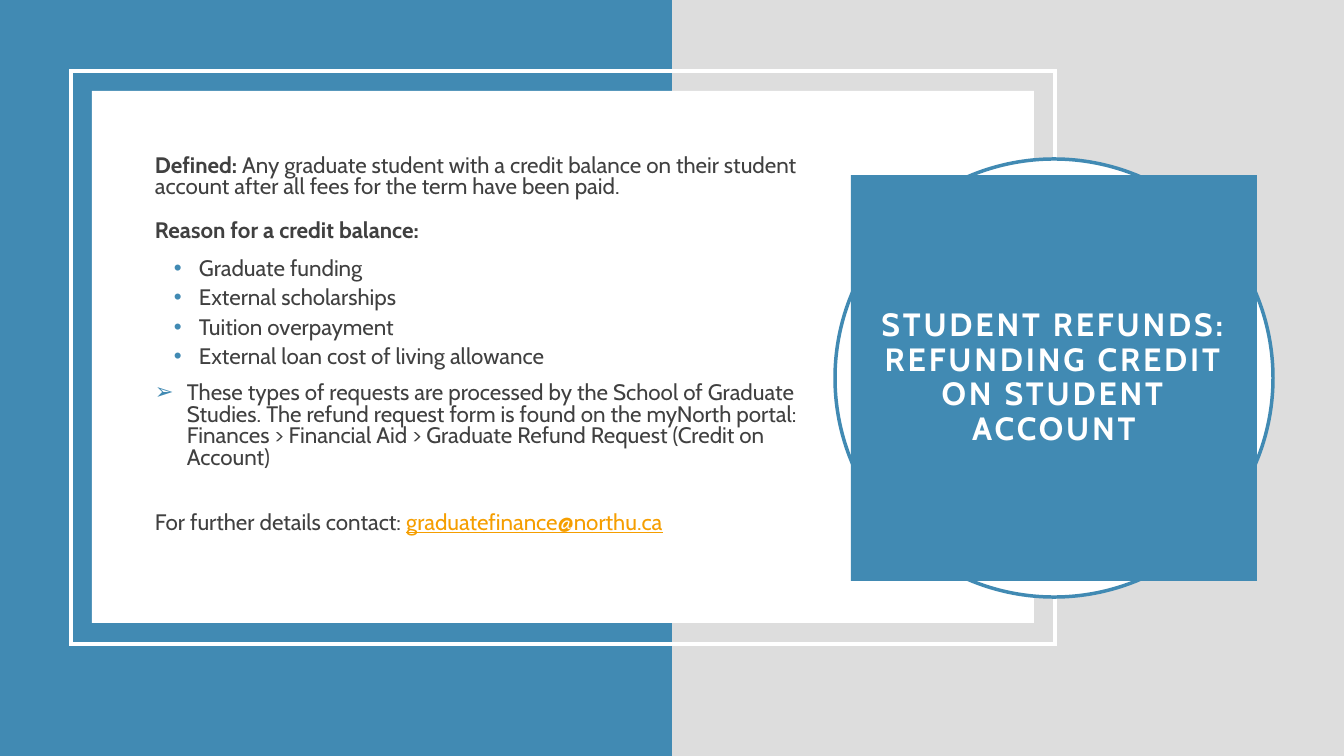
"""Build the slide on refunding a credit balance on a student account."""
from dataclasses import dataclass
from typing import Optional

from lxml.etree import SubElement
from pptx import Presentation
from pptx.dml.color import RGBColor
from pptx.enum.shapes import MSO_SHAPE
from pptx.enum.text import MSO_ANCHOR, MSO_AUTO_SIZE, PP_ALIGN
from pptx.oxml.ns import qn
from pptx.util import Emu, Pt

PX = 914400 / 100.8
FONT = "Cabin"
BLUE, GREY, WHITE, DARK, ORANGE = "418AB3", "DDDDDD", "FFFFFF", "404040", "F59E00"


@dataclass(frozen=True)
class Panel:
    kind: MSO_SHAPE
    left: int
    top: int
    width: int
    height: int
    fill: Optional[str] = None
    line: Optional[str] = None


@dataclass(frozen=True)
class Piece:
    text: str
    bold: bool = False
    color: str = DARK
    underline: bool = False


@dataclass(frozen=True)
class Passage:
    pieces: tuple[Piece, ...]
    spacing: float = 0.8
    before: int = 10
    after: int = 6
    bullet: str = ""
    margin: int = 0
    hanging: int = 0


def reason(text: str) -> Passage:
    """Return one bulleted reason for a credit balance."""
    return Passage((Piece(text),), 1.1, 0, 0, "•", 44, 25)


PANELS = (
    Panel(MSO_SHAPE.RECTANGLE, 0, 0, 672, 756, fill=BLUE),
    Panel(MSO_SHAPE.RECTANGLE, 71, 71, 984, 573, line=WHITE),
    Panel(MSO_SHAPE.RECTANGLE, 92, 91, 942, 532, fill=WHITE),
    Panel(MSO_SHAPE.OVAL, 835, 159, 438, 438, fill=WHITE, line=BLUE),
)

PASSAGES = (
    Passage((
        Piece("Defined:", bold=True),
        Piece(" Any graduate student with a credit balance on their student "
              "account after all fees for the term have been paid."),
    )),
    Passage((Piece("Reason for a credit balance:", bold=True),)),
    reason("Graduate funding"),
    reason("External scholarships"),
    reason("Tuition overpayment"),
    reason("External loan cost of living allowance"),
    Passage((Piece(
        "These types of requests are processed by the School of Graduate Studies. "
        "The refund request form is found on the myNorth portal:\v"
        "Finances > Financial Aid > Graduate Refund Request (Credit on Account)"),),
        after=21, bullet="➢", margin=32, hanging=32),
    Passage((
        Piece("For further details contact: "),
        Piece("graduatefinance@northu.ca", color=ORANGE, underline=True),
    )),
)


def px(length: int) -> Emu:
    """Turn whole px into EMU."""
    return Emu(round(length * PX))


def rgb(color: str) -> RGBColor:
    """Turn a hex string into a colour."""
    return RGBColor.from_string(color)


def style_run(run, size: int, color: str, bold: bool, underline: bool = False) -> None:
    """Give a run its font, size, colour and emphasis."""
    run.font.name = FONT
    run.font.size = Pt(size)
    run.font.color.rgb = rgb(color)
    run.font.bold = bold
    run.font.underline = underline


def draw_panel(slide, panel: Panel) -> None:
    """Draw one background panel."""
    shape = slide.shapes.add_shape(
        panel.kind, px(panel.left), px(panel.top), px(panel.width), px(panel.height))
    shape.shadow.inherit = False
    if panel.fill:
        shape.fill.solid()
        shape.fill.fore_color.rgb = rgb(panel.fill)
    else:
        shape.fill.background()
    if panel.line:
        shape.line.color.rgb = rgb(panel.line)
        shape.line.width = Pt(2.5)
        SubElement(shape.element.spPr.find(qn("a:ln")), qn("a:miter"), lim="800000")
    else:
        shape.line.fill.background()


def draw_title(slide) -> None:
    """Place the title block in front of the panels and format it."""
    title = slide.shapes.title
    title.element.getparent().append(title.element)
    title.left, title.top, title.width, title.height = px(851), px(175), px(406), px(406)
    title.fill.solid()
    title.fill.fore_color.rgb = rgb(BLUE)
    frame = title.text_frame
    frame.text = "STUDENT REFUNDS: REFUNDING CREDIT ON STUDENT ACCOUNT"
    frame.word_wrap = True
    frame.auto_size = MSO_AUTO_SIZE.NONE
    frame.vertical_anchor = MSO_ANCHOR.MIDDLE
    frame.margin_left = frame.margin_right = px(20)
    frame.margin_top = frame.margin_bottom = px(20)
    heading = frame.paragraphs[0]
    heading.alignment = PP_ALIGN.CENTER
    heading.line_spacing = 0.9
    for run in heading.runs:
        style_run(run, 23, WHITE, True)
        run.font._element.set("spc", "200")


def add_bullet(paragraph, passage: Passage) -> None:
    """Give a paragraph a blue bullet with a hanging indent."""
    properties = paragraph._p.get_or_add_pPr()
    properties.set("marL", str(px(passage.margin)))
    properties.set("indent", str(-px(passage.hanging)))
    bullet_color = SubElement(properties, qn("a:buClr"))
    SubElement(bullet_color, qn("a:srgbClr"), val=BLUE)
    SubElement(properties, qn("a:buFont"), typeface="Arial")
    SubElement(properties, qn("a:buChar"), char=passage.bullet)


def write_passage(paragraph, passage: Passage) -> None:
    """Write one paragraph of the body."""
    paragraph.line_spacing = passage.spacing
    paragraph.space_before = Pt(passage.before)
    paragraph.space_after = Pt(passage.after)
    if passage.bullet:
        add_bullet(paragraph, passage)
    for piece in passage.pieces:
        for index, line in enumerate(piece.text.split("\v")):
            if index:
                paragraph.add_line_break()
            run = paragraph.add_run()
            run.text = line
            style_run(run, 16, piece.color, piece.bold, piece.underline)


def draw_body(slide) -> None:
    """Write the definition, the reasons and the contact."""
    frame = slide.shapes.add_textbox(px(145), px(141), px(669), px(431)).text_frame
    frame.word_wrap = True
    frame.margin_left = frame.margin_right = px(10)
    frame.margin_top, frame.margin_bottom = px(15), 0
    for index, passage in enumerate(PASSAGES):
        paragraph = frame.add_paragraph() if index else frame.paragraphs[0]
        write_passage(paragraph, passage)


def main() -> None:
    """Build and save the presentation."""
    deck = Presentation()
    deck.slide_width, deck.slide_height = px(1344), px(756)
    slide = deck.slides.add_slide(deck.slide_layouts[5])
    slide.background.fill.solid()
    slide.background.fill.fore_color.rgb = rgb(GREY)
    for panel in PANELS:
        draw_panel(slide, panel)
    draw_title(slide)
    draw_body(slide)
    deck.save("out.pptx")


if __name__ == "__main__":
    main()
